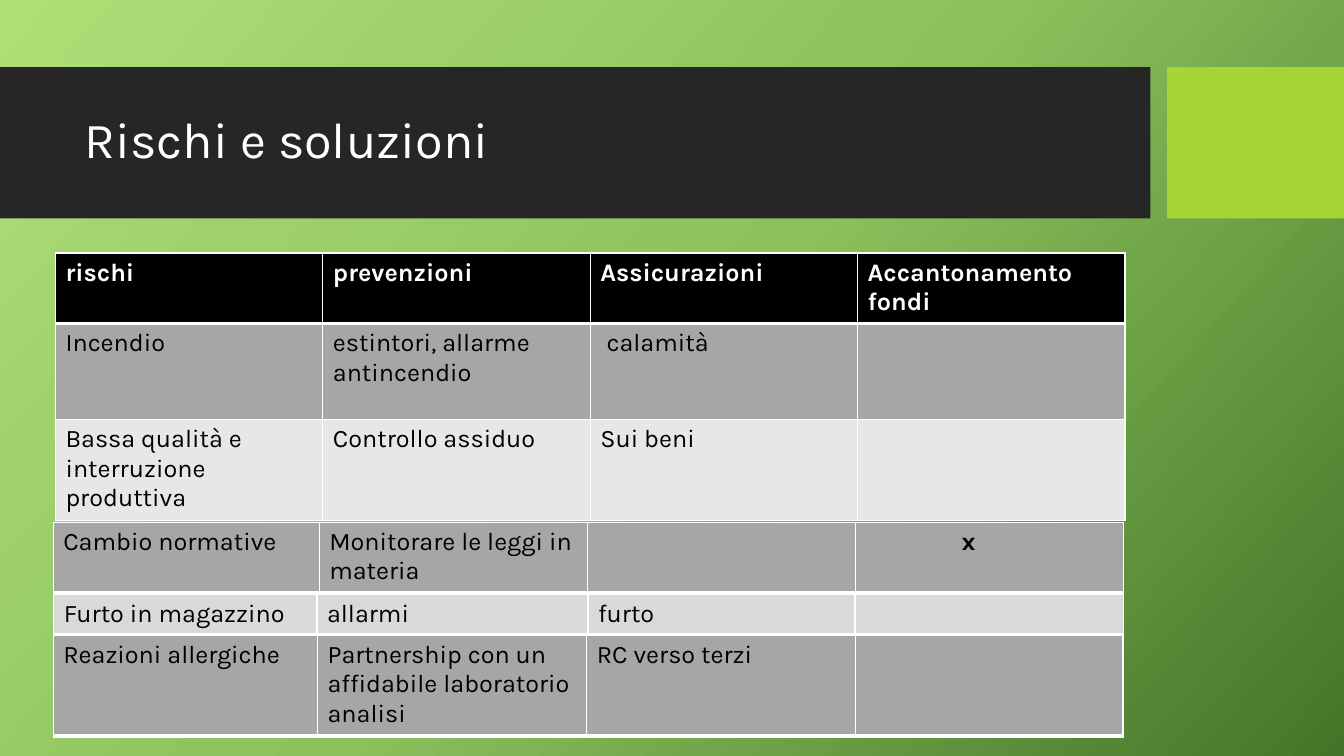
from copy import deepcopy

from lxml.etree import SubElement
from pptx import Presentation
from pptx.dml.color import RGBColor
from pptx.enum.shapes import MSO_SHAPE
from pptx.enum.text import MSO_ANCHOR
from pptx.oxml.ns import qn
from pptx.util import Pt

BLACK, WHITE, GREY, PALE, SILVER = "000000", "FFFFFF", "A6A6A6", "E7E7E7", "D9D9D9"


def rgb(value):
    return RGBColor.from_string(value)


class Deck:
    font = "Karla"
    cell_size = 18
    pad = 7.2

    def __init__(self, prs):
        self.s = prs.slides.add_slide(prs.slide_layouts[6])

    def background(self, stops, angle):
        fill = self.s.background.fill
        fill.gradient()
        fill.gradient_angle = 360 - angle
        stop_list = self.s.element.find(".//" + qn("a:gsLst"))
        while len(stop_list) < len(stops):
            stop_list.append(deepcopy(stop_list[-1]))
        for stop, (position, color) in zip(fill.gradient_stops, stops):
            stop.position = position
            stop.color.rgb = rgb(color)

    def band(self, x, y, w, h, color):
        sp = self.s.shapes.add_shape(MSO_SHAPE.RECTANGLE, Pt(x), Pt(y), Pt(w), Pt(h))
        sp.shadow.inherit = False
        sp.fill.solid()
        sp.fill.fore_color.rgb = rgb(color)
        sp.line.fill.background()

    def run(self, p, text, size, color, bold=False):
        r = p.add_run()
        r.text = text
        r.font.name = self.font
        r.font.size = Pt(size)
        r.font.bold = bold
        r.font.color.rgb = rgb(color)

    def title(self, x, y, w, h, text):
        tf = self.s.shapes.add_textbox(Pt(x), Pt(y), Pt(w), Pt(h)).text_frame
        tf.word_wrap = True
        tf.vertical_anchor = MSO_ANCHOR.MIDDLE
        p = tf.paragraphs[0]
        p.line_spacing = 0.9
        self.run(p, text, 36, WHITE)

    def borders(self, cell, widths):
        props = cell._tc.get_or_add_tcPr()
        for side, width in zip("LRTB", widths):
            line = SubElement(props, qn(f"a:ln{side}"), w=str(Pt(width)))
            fill = SubElement(line, qn("a:solidFill"))
            SubElement(fill, qn("a:srgbClr"), val=WHITE)

    def table(self, x, y, widths, heights, rows, fills, header=False, indents={}):
        frame = self.s.shapes.add_table(len(rows), len(widths), Pt(x), Pt(y),
                                        Pt(sum(widths)), Pt(sum(heights)))
        table = frame.table
        table.first_row = header
        table.horz_banding = False
        for column, width in zip(table.columns, widths):
            column.width = Pt(width)
        for i, (row, height, fill) in enumerate(zip(rows, heights, fills)):
            table.rows[i].height = Pt(height)
            is_header = header and i == 0
            for j, text in enumerate(row):
                cell = table.cell(i, j)
                # The first row of each table has a thick rule below it
                self.borders(cell, (1, 1, 3 if i == 1 else 1, 3 if i == 0 else 1))
                cell.fill.solid()
                cell.fill.fore_color.rgb = rgb(fill)
                cell.margin_left = Pt(self.pad + indents.get(text, 0))
                p = cell.text_frame.paragraphs[0]
                p.font.name = self.font
                p.font.size = Pt(self.cell_size)
                if text:
                    self.run(p, text, self.cell_size, WHITE if is_header else BLACK,
                             is_header or text == "x")


def main():
    prs = Presentation()
    prs.slide_width, prs.slide_height = Pt(960), Pt(540)
    deck = Deck(prs)

    # Background and title band
    deck.background([(0, "AFDE77"), (0.5, "8BC25D"), (1, "437528")], 42)
    deck.band(0, 48, 821.8, 108, "262626")
    deck.band(833.6, 48, 126.4, 108, "A7D535")
    deck.title(53.3, 59, 756.7, 85, "Rischi e soluzioni")

    # Main risk table
    deck.table(39.6, 180.7, [191] * 4, [48.8, 68.4, 71], [
        ["rischi", "prevenzioni", "Assicurazioni", "Accantonamento fondi"],
        ["Incendio", "estintori, allarme antincendio", "calamità", ""],
        ["Bassa qualità e interruzione produttiva", "Controllo assiduo", "Sui beni", ""],
    ], [BLACK, GREY, PALE], header=True, indents={"calamità": 4.5})

    # Single-row tables below
    for x, y, widths, height, row, fill in [
        (38, 373, [190, 191.6, 191.6, 191.6], 49.5,
         ["Cambio normative", "Monitorare le leggi in materia", "", "x"], GREY),
        (38.4, 424.8, [188, 193.6, 190.8, 191.5], 28.5,
         ["Furto in magazzino", "allarmi", "furto", ""], SILVER),
        (38, 453.6, [188.8, 192.3, 192.3, 190.8], 70.5,
         ["Reazioni allergiche", "Partnership con un affidabile laboratorio analisi",
          "RC verso terzi", ""], GREY),
    ]:
        deck.table(x, y, widths, [height], [row], [fill], indents={"x": 68.5})

    prs.save("out.pptx")


if __name__ == "__main__":
    main()
